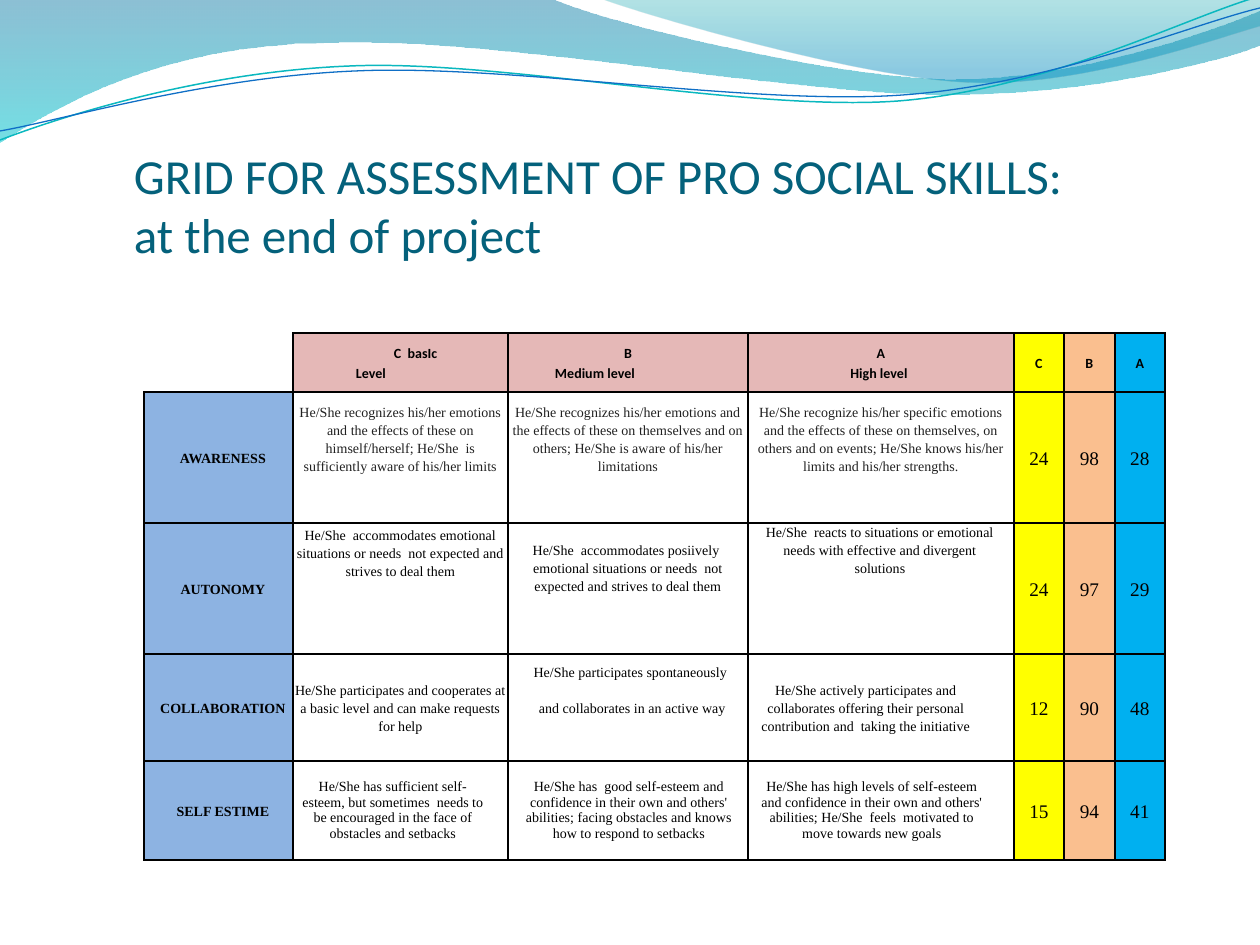
from dataclasses import dataclass

from pptx import Presentation
from pptx.dml.color import RGBColor
from pptx.enum.text import MSO_ANCHOR, MSO_AUTO_SIZE, PP_ALIGN
from pptx.oxml import parse_xml
from pptx.oxml.ns import nsdecls, qn
from pptx.util import Pt

PX = 914400 / 126
SERIF, SANS = "Times New Roman", "Calibri"
BLACK, GREY, ROSE, BLUE = "000000", "212121", "E5B8B7", "8DB3E2"
LEVEL_FILLS = ["FFFF00", "FABF8F", "00B0F0"]
COLUMNS = [149, 215, 240, 266, 50, 51, 50]
ROWS = [59, 131, 131, 107, 99]


def px(value: int) -> int:
    return round(value * PX)


def color(value: str) -> RGBColor:
    return RGBColor.from_string(value)


@dataclass
class Line:
    text: str
    left: int = 0
    right: int = 0
    first: int = 0
    align: PP_ALIGN = PP_ALIGN.CENTER


@dataclass
class Entry:
    lines: list[Line]
    fill: str = ""
    size: int = 8
    font: str = SERIF
    bold: bool = False
    ink: str = BLACK
    top: int | None = None
    spacing: float = 1.15


@dataclass
class Wave:
    start: tuple
    segments: list
    stops: tuple = ()
    stroke: str = ""
    width: float = 0


WAVES = [
    Wave((0, 0), [
        [(554, 0)], [(600, 21), (837, 79), (955, 79)], [(1075, 79), (1207, 33), (1260, 11)],
        [(1260, 45)], [(1239, 55), (1096, 96), (940, 94)], [(784, 94), (481, 35), (324, 43)],
        [(163, 45), (58, 105), (0, 142)], [(0, 0)],
    ], stops=((0, "0074A1", 45), (1, "00C6CF", 55))),
    Wave((604, 0), [
        [(641, 14), (859, 78), (969, 82)], [(1079, 87), (1211, 40), (1260, 26)], [(1260, 0)],
        [(604, 0)],
    ], stops=((0, "00A1A9", 30), (0.8, "008BBF", 45))),
    Wave((0, 140), [
        [(60, 117), (199, 72), (349, 66)], [(498, 59), (747, 112), (898, 101)],
        [(1049, 89), (1182, 19), (1257, -3)],
    ], stroke="0AB8BF", width=0.85),
    Wave((0, 131), [
        [(59, 121), (207, 77), (356, 71)], [(508, 64), (752, 106), (903, 95)],
        [(1053, 84), (1186, 26), (1260, 8)],
    ], stroke="0F6FC6", width=0.75),
]

HEADERS = [
    [Line("C  basIc Level", 63, 50, 38, PP_ALIGN.LEFT)],
    [Line("B"), Line("Medium level", 44, 110)],
    [Line("A"), Line("High level", 68, 72)],
]
SKILLS = [
    ("AWARENESS", [
        Entry([Line("He/She recognizes his/her emotions and the effects of these on himself/herself; "
                    "He/She  is sufficiently aware of his/her limits")], ink=GREY, top=11),
        Entry([Line("He/She recognizes his/her emotions and the effects of these on themselves and on "
                    "others; He/She is aware of his/her limitations")], ink=GREY, top=11),
        Entry([Line("He/She recognize his/her specific emotions and the effects of these on themselves, "
                    "on others and on events; He/She knows his/her limits and his/her strengths.")],
              ink=GREY, top=11),
    ], [24, 98, 28]),
    ("AUTONOMY", [
        Entry([Line("He/She  accommodates emotional situations or needs  not expected and strives "
                    "to deal them")], top=3),
        Entry([Line("He/She  accommodates posiively  emotional situations or needs  not expected and "
                    "strives to deal them")], top=18),
        Entry([Line("He/She  reacts to situations or emotional needs with effective and divergent "
                    "solutions", 14, 16)], top=0),
    ], [24, 97, 29]),
    ("COLLABORATION", [
        Entry([Line("He/She participates and cooperates at a basic level and can make requests for help")]),
        Entry([Line("He/She participates spontaneously", 9, 4), Line("and collaborates in an active way", 9)],
              top=9),
        Entry([Line("He/She actively participates and collaborates offering their personal contribution "
                    "and  taking the initiative", 9, 39)]),
    ], [12, 90, 48]),
    ("SELF ESTIME", [
        Entry([Line("He/She has sufficient self-esteem, but sometimes  needs to be encouraged in the face "
                    "of obstacles and setbacks", 9, 24)], spacing=0.99),
        Entry([Line("He/She has  good self-esteem and confidence in their own and others' abilities; "
                    "facing obstacles and knows how to respond to setbacks", 9, 7)], spacing=0.99),
        Entry([Line("He/She has high levels of self-esteem and confidence in their own and others' "
                    "abilities; He/She  feels  motivated to move towards new goals", 9, 27)], spacing=0.99),
    ], [15, 94, 41]),
]


def bend(shape, segments: list) -> None:
    outline = next(shape.element.iter(qn("a:path")))
    nodes = iter(outline.findall(qn("a:lnTo")))
    for segment in segments:
        corners = [next(nodes) for _ in segment]
        if len(corners) == 3:
            curve = parse_xml(f'<a:cubicBezTo {nsdecls("a")}/>')
            corners[0].addprevious(curve)
            for corner in corners:
                curve.append(corner[0])
                outline.remove(corner)


def draw_wave(page, wave: Wave) -> None:
    points = [(px(x), px(y)) for segment in wave.segments for x, y in segment]
    builder = page.shapes.build_freeform(*map(px, wave.start), scale=1.0)
    builder.add_line_segments(points, close=bool(wave.stops))
    shape = builder.convert_to_shape()
    bend(shape, wave.segments)
    shape.shadow.inherit = False
    if not wave.stops:
        shape.fill.background()
        shape.line.color.rgb = color(wave.stroke)
        shape.line.width = Pt(wave.width)
        return
    shape.line.fill.background()
    shape.fill.gradient()
    shape.fill.gradient_angle = 270
    for stop, (position, tint, _) in zip(shape.fill.gradient_stops, wave.stops):
        stop.position = position
        stop.color.rgb = color(tint)
    tints = shape.element.spPr.iter(qn("a:srgbClr"))
    for node, (_, _, alpha) in zip(list(tints), wave.stops):
        node.append(parse_xml(f'<a:alpha {nsdecls("a")} val="{alpha * 1000}"/>'))


def add_borders(cell, sides: str) -> None:
    properties = cell._tc.get_or_add_tcPr()
    for index, side in enumerate(sides):
        properties.insert(index, parse_xml(
            f'<a:ln{side} {nsdecls("a")} w="12700"><a:solidFill><a:srgbClr val="{BLACK}"/>'
            f'</a:solidFill></a:ln{side}>'))


def fill_cell(cell, entry: Entry) -> None:
    cell.margin_left = cell.margin_right = cell.margin_bottom = 0
    cell.margin_top = px(entry.top or 0)
    cell.vertical_anchor = MSO_ANCHOR.MIDDLE if entry.top is None else MSO_ANCHOR.TOP
    if entry.fill:
        cell.fill.solid()
        cell.fill.fore_color.rgb = color(entry.fill)
    else:
        cell.fill.background()
    cell.text_frame.text = "\n".join(line.text for line in entry.lines)
    for number, (para, line) in enumerate(zip(cell.text_frame.paragraphs, entry.lines)):
        para.alignment = line.align
        para.line_spacing = entry.spacing
        if number and entry.font == SERIF:
            para.space_before = Pt(10)
        properties = para._p.get_or_add_pPr()
        for name, value in (("marL", line.left), ("marR", line.right), ("indent", line.first)):
            properties.set(name, str(px(value)))
        for span in para.runs:
            span.font.name = entry.font
            span.font.size = Pt(entry.size)
            span.font.bold = entry.bold
            span.font.color.rgb = color(entry.ink)


def draw_title(page) -> None:
    title = page.shapes.title
    title.left, title.top, title.width, title.height = map(px, (134, 106, 968, 157))
    frame = title.text_frame
    frame.text = "GRID FOR ASSESSMENT OF PRO SOCIAL SKILLS: at the end of project"
    frame.margin_left = frame.margin_right = frame.margin_bottom = 0
    frame.auto_size = MSO_AUTO_SIZE.NONE
    frame.word_wrap = True
    frame.vertical_anchor = MSO_ANCHOR.BOTTOM
    para = frame.paragraphs[0]
    para.alignment = PP_ALIGN.LEFT
    font = para.runs[0].font
    font.name, font.size, font.color.rgb = SANS, Pt(28), color("04617B")


def draw_grid(page) -> None:
    table = page.shapes.add_table(len(ROWS), len(COLUMNS), px(144), px(333),
                                  px(sum(COLUMNS)), px(sum(ROWS))).table
    table.first_row = table.horz_banding = False
    for column, width in zip(table.columns, COLUMNS):
        column.width = px(width)
    for row, height in zip(table.rows, ROWS):
        row.height = px(height)
    header = [Entry([])]
    header += [Entry(lines, ROSE, font=SANS, bold=True) for lines in HEADERS]
    header += [Entry([Line(name)], fill, font=SANS, bold=True) for name, fill in zip("CBA", LEVEL_FILLS)]
    grid = [header]
    for name, levels, counts in SKILLS:
        label = Entry([Line(name, 9)], BLUE, bold=True)
        totals = [Entry([Line(str(count))], fill, 11) for count, fill in zip(counts, LEVEL_FILLS)]
        grid.append([label, *levels, *totals])
    for row, entries in zip(table.rows, grid):
        for cell, entry in zip(row.cells, entries):
            fill_cell(cell, entry)
            add_borders(cell, "LRTB" if entry.lines else "RB")


def main() -> None:
    deck = Presentation()
    deck.slide_width, deck.slide_height = px(1260), px(945)
    page = deck.slides.add_slide(deck.slide_layouts[5])
    for wave in WAVES:
        draw_wave(page, wave)
    draw_title(page)
    draw_grid(page)
    deck.save("out.pptx")


if __name__ == "__main__":
    main()
